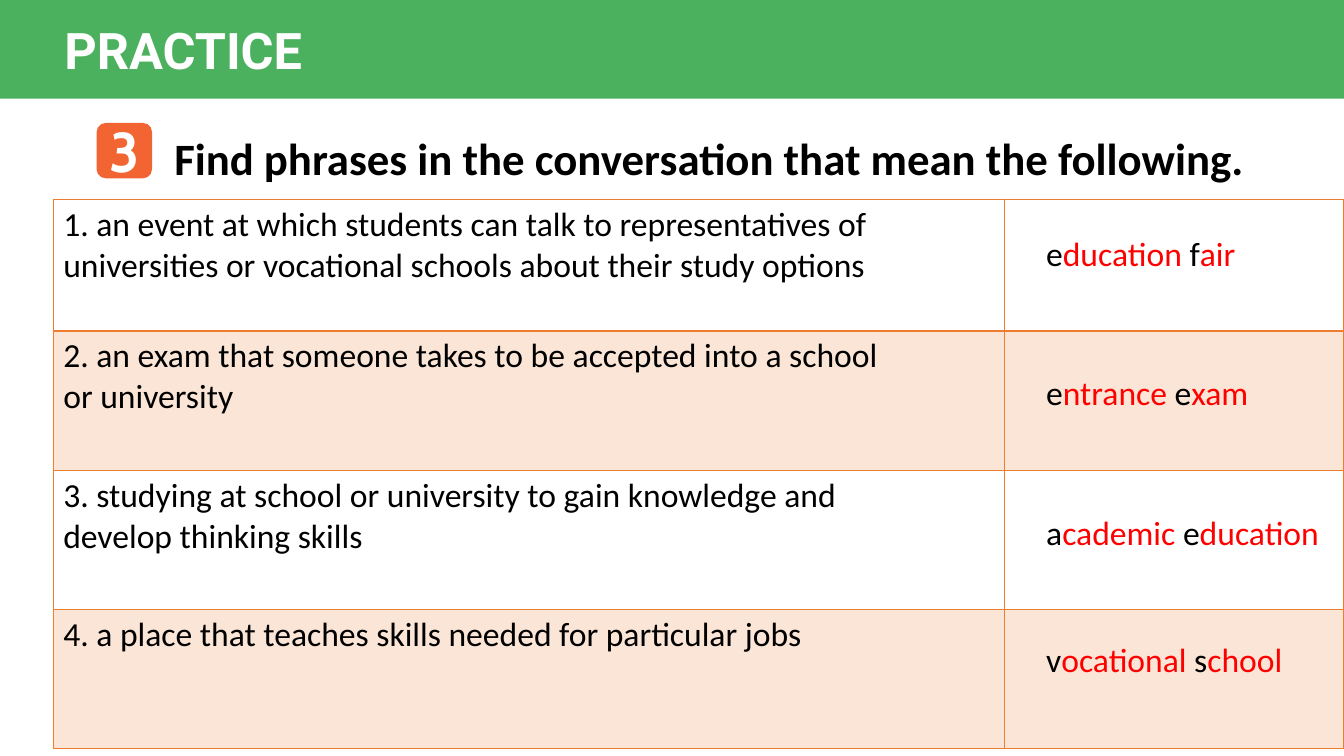
from dataclasses import dataclass

import pptx
import pptx.dml.color
import pptx.enum.shapes
import pptx.enum.text
import pptx.oxml
import pptx.oxml.ns
import pptx.util
from pptx.util import Pt

BLACK, WHITE, RED = "000000", "FFFFFF", "FF0000"
GREEN, BADGE_ORANGE = "4CB15F", "F26532"
GRID_ORANGE, BAND_PEACH = "ED7D31", "FBE5D6"
PHRASE_LEFT, PHRASE_WIDTH = 740.2, 219.8


@dataclass
class Style:
    size: float
    font: str = "Calibri"
    color: str = BLACK
    bold: bool = False


@dataclass
class Definition:
    """A meaning, the phrase as (first letter, rest) pairs, and its place."""
    meaning: list[str]
    phrase: list[tuple[str, str]]
    row_height: float
    phrase_top: float


DEFINITIONS = [
    Definition(["1. an event at which students can talk to representatives of "
                "universities or vocational schools about their study options"],
               [("e", "ducation "), ("f", "air")], 94, 160.5),
    Definition(["2. an exam that someone takes to be accepted into a school",
                "or university"],
               [("e", "ntrance "), ("e", "xam")], 99.5, 260),
    Definition(["3. studying at school or university to gain knowledge and",
                "develop thinking skills"],
               [("a", "cademic "), ("e", "ducation")], 99.5, 360),
    Definition(["4. a place that teaches skills needed for particular jobs"],
               [("v", "ocational "), ("s", "chool")], 99.5, 450.7),
]


def rgb(color: str):
    return pptx.dml.color.RGBColor.from_string(color)


def add_run(paragraph, text: str, style: Style) -> None:
    run = paragraph.add_run()
    run.text = text
    run.font.size = Pt(style.size)
    run.font.name = style.font
    run.font.bold = style.bold
    run.font.color.rgb = rgb(style.color)


def add_block(slide, preset, left: float, top: float, width: float,
              height: float, color: str):
    block = slide.shapes.add_shape(preset, Pt(left), Pt(top), Pt(width), Pt(height))
    block.shadow.inherit = False
    block.fill.solid()
    block.fill.fore_color.rgb = rgb(color)
    block.line.fill.background()


def add_line_of_text(slide, left: float, top: float, width: float, height: float,
                     runs: list[tuple[str, Style]]):
    """Add a one-paragraph text box and return the paragraph."""
    box = slide.shapes.add_textbox(Pt(left), Pt(top), Pt(width), Pt(height))
    box.text_frame.word_wrap = True
    paragraph = box.text_frame.paragraphs[0]
    for text, style in runs:
        add_run(paragraph, text, style)
    return paragraph


def set_borders(cell, color: str, widths: dict[str, float]) -> None:
    properties = cell._tc.get_or_add_tcPr()
    for index, (side, width) in enumerate(widths.items()):
        properties.insert(index, pptx.oxml.parse_xml(
            f'<a:{side} {pptx.oxml.ns.nsdecls("a")} w="{Pt(width)}"><a:solidFill>'
            f'<a:srgbClr val="{color}"/></a:solidFill></a:{side}>'))


def add_definitions(slide, definitions: list[Definition]) -> None:
    heights = [definition.row_height for definition in definitions]
    table = slide.shapes.add_table(len(definitions), 2, Pt(38), Pt(142.3),
                                   Pt(922), Pt(sum(heights))).table
    for column, width in zip(table.columns, (679.5, 242.5)):
        column.width = Pt(width)
    for index, definition in enumerate(definitions):
        row = table.rows[index]
        row.height = Pt(definition.row_height)
        widths = {"lnL": 1, "lnR": 1, "lnT": 2 if index == 1 else 1,
                  "lnB": 2 if index == 0 else 1}
        for cell in row.cells:
            cell.fill.solid()
            cell.fill.fore_color.rgb = rgb(BAND_PEACH if index % 2 else WHITE)
            set_borders(cell, GRID_ORANGE, widths)
        meaning = row.cells[0].text_frame
        for number, line in enumerate(definition.meaning):
            paragraph = meaning.add_paragraph() if number else meaning.paragraphs[0]
            add_run(paragraph, line, Style(24))


def add_phrase(slide, definition: Definition) -> None:
    runs = []
    for initial, rest in definition.phrase:
        runs += [(initial, Style(24)), (rest, Style(24, color=RED))]
    phrase = add_line_of_text(slide, PHRASE_LEFT, definition.phrase_top,
                              PHRASE_WIDTH, 36.7, runs)
    phrase.line_spacing = 1.07
    phrase.space_after = Pt(8)


def main() -> None:
    presentation = pptx.Presentation()
    presentation.slide_width, presentation.slide_height = Pt(960), Pt(540)
    slide = presentation.slides.add_slide(presentation.slide_layouts[6])
    presets = pptx.enum.shapes.MSO_SHAPE

    add_block(slide, presets.ROUNDED_RECTANGLE, 69, 87.8, 39.6, 39.6, BADGE_ORANGE)
    exercise_number = add_line_of_text(
        slide, 71.3, 79.9, 35.3, 55.4, [("3", Style(40, "Cabin", WHITE, True))])
    exercise_number.alignment = pptx.enum.text.PP_ALIGN.CENTER
    add_line_of_text(slide, 117.4, 90, 842.4, 46, [
        ("Find phrases in the conversation that mean the following.",
         Style(32, bold=True))])

    add_block(slide, presets.RECTANGLE, 0, 0, 960, 70.5, GREEN)
    add_line_of_text(slide, 39, 10, 360, 51,
                     [("PRACTICE", Style(36, "Roboto", WHITE, True))])

    add_definitions(slide, DEFINITIONS)
    for definition in DEFINITIONS:
        add_phrase(slide, definition)
    presentation.save("out.pptx")


if __name__ == "__main__":
    main()
